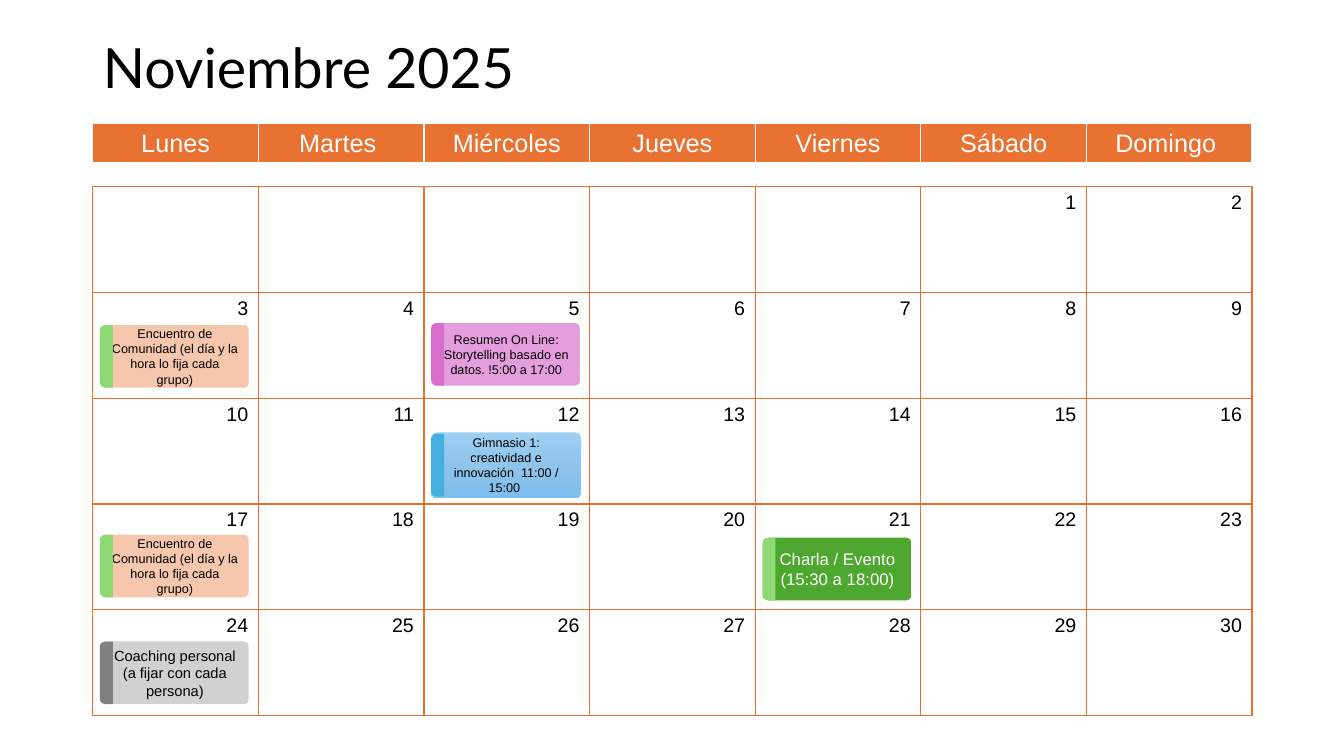
from copy import deepcopy

from lxml import etree
from pptx import Presentation
from pptx.dml.color import RGBColor
from pptx.enum import shapes, text
from pptx.oxml import ns
from pptx.util import Inches, Pt

COLORS = {
    "orange": "E97132", "white": "FFFFFF", "black": "000000",
    "peach": "F6C6AD", "light_green": "8ED973", "green": "4EA72E",
    "pink": "E59EDD", "magenta": "D86ECC", "blue": "46B1E1",
    "sky_top": "9ECFF5", "sky_middle": "90C4EB", "sky_bottom": "7CBEED",
    "light_gray": "D1D1D1", "gray": "808080",
}
TITLE = "Noviembre 2025"
WEEKDAYS = ["Lunes", "Martes ", "Miércoles", "Jueves", "Viernes", "Sábado", "Domingo "]
FIRST_COLUMN, DAYS, WEEKS = 5, 30, 5
SKY = ("sky_top", "sky_middle", "sky_bottom")
COMMUNITY = "Encuentro de Comunidad (el día y la hora lo fija cada grupo)"
# day, distance below the top of the day cell, text, size, card fill, tab fill, text color
EVENTS = [
    (12, 0.34, "Gimnasio 1: creatividad e innovación  11:00 / 15:00 ", 9, SKY, "blue", "black"),
    (21, 0.32, "Charla / Evento (15:30 a 18:00)", 12, "green", "light_green", "white"),
    (3, 0.31, COMMUNITY, 9, "peach", "light_green", "black"),
    (17, 0.29, COMMUNITY, 9, "peach", "light_green", "black"),
    (24, 0.3, "Coaching personal (a fijar con cada persona)", 10.5, "light_gray", "gray", "black"),
    (5, 0.29, "Resumen On Line: Storytelling basado en datos. !5:00 a 17:00", 9,
     "pink", "magenta", "black"),
]

LEFT, WIDTH = 0.92, 11.5
HEADER_TOP, HEADER_HEIGHT = 1.22, 0.41
GRID_TOP, ROW_HEIGHT = 1.85, 1.05
COLUMN_WIDTH = WIDTH / len(WEEKDAYS)
CARD_WIDTH, CARD_HEIGHT, CARD_INDENT = 1.49, 0.65, 0.07
TAB_LENGTH, TAB_THICKNESS = 0.62, 0.13


def rgb(name):
    return RGBColor.from_string(COLORS[name])


def write(frame, words, size, color, alignment, font="Arial"):
    paragraph = frame.paragraphs[0]
    paragraph.alignment = alignment
    run = paragraph.add_run()
    run.text = words
    run.font.name = font
    run.font.size = Pt(size)
    run.font.bold = False
    run.font.color.rgb = rgb(color)
    return paragraph


def set_borders(cell, color, widths):
    """Draw the left, right, top and bottom cell borders, with widths in points."""
    properties = cell._tc.get_or_add_tcPr()
    for side, width in zip("LRTB", widths):
        line = etree.SubElement(properties, ns.qn(f"a:ln{side}"), w=str(Pt(width)))
        fill = etree.SubElement(line, ns.qn("a:solidFill"))
        etree.SubElement(fill, ns.qn("a:srgbClr"), val=COLORS[color])


def add_plain_table(slide, rows, top, row_height):
    table = slide.shapes.add_table(
        rows, len(WEEKDAYS), Inches(LEFT), Inches(top),
        Inches(WIDTH), Inches(rows * row_height)).table
    table.first_row = table.horz_banding = False
    for row in table.rows:
        row.height = Inches(row_height)
    for column in table.columns:
        column.width = Inches(COLUMN_WIDTH)
    return table


def add_header(slide):
    table = add_plain_table(slide, 1, HEADER_TOP, HEADER_HEIGHT)
    for cell, weekday in zip(table.iter_cells(), WEEKDAYS):
        set_borders(cell, "white", (1, 1, 1, 3))
        cell.fill.solid()
        cell.fill.fore_color.rgb = rgb("orange")
        cell.vertical_anchor = text.MSO_ANCHOR.MIDDLE
        write(cell.text_frame, weekday, 18, "white", text.PP_ALIGN.CENTER)


def add_month(slide):
    table = add_plain_table(slide, WEEKS, GRID_TOP, ROW_HEIGHT)
    for day, cell in enumerate(table.iter_cells(), 1 - FIRST_COLUMN):
        set_borders(cell, "orange", (1, 1, 1, 1))
        cell.fill.background()
        if 1 <= day <= DAYS:
            write(cell.text_frame, str(day), 14, "black", text.PP_ALIGN.RIGHT)


def fill_vertical_gradient(fill, names):
    fill.gradient()
    fill.gradient_angle = 270
    first = fill.gradient_stops[0]._gs
    first.addnext(deepcopy(first))
    for index, (stop, name) in enumerate(zip(fill.gradient_stops, names)):
        stop.position = index / (len(names) - 1)
        stop.color.rgb = rgb(name)


def add_block(group, kind, left, top, width, height, fill):
    block = group.shapes.add_shape(
        kind, Inches(left), Inches(top), Inches(width), Inches(height))
    block.shadow.inherit = False
    block.line.fill.background()
    if isinstance(fill, tuple):
        fill_vertical_gradient(block.fill, fill)
    else:
        block.fill.solid()
        block.fill.fore_color.rgb = rgb(fill)
    return block


def add_event(slide, day, drop, words, size, card_fill, tab_fill, color):
    week, weekday = divmod(day - 1 + FIRST_COLUMN, len(WEEKDAYS))
    left = LEFT + weekday * COLUMN_WIDTH + CARD_INDENT
    top = GRID_TOP + week * ROW_HEIGHT + drop
    group = slide.shapes.add_group_shape()

    card = add_block(group, shapes.MSO_SHAPE.ROUNDED_RECTANGLE,
                     left, top, CARD_WIDTH, CARD_HEIGHT, card_fill)
    card.adjustments[0] = 0.089
    if card_fill != SKY:
        card.line.color.rgb = rgb("white")
        card.line.width = Pt(2)
    card.text_frame.word_wrap = True
    card.text_frame.vertical_anchor = text.MSO_ANCHOR.MIDDLE
    write(card.text_frame, words, size, color, text.PP_ALIGN.CENTER)

    # The tab is turned on its side, so it is placed by its center.
    tab = add_block(group, shapes.MSO_SHAPE.ROUND_2_SAME_RECTANGLE,
                    left + (TAB_THICKNESS - TAB_LENGTH) / 2,
                    top + (CARD_HEIGHT - TAB_THICKNESS) / 2,
                    TAB_LENGTH, TAB_THICKNESS, tab_fill)
    tab.adjustments[0], tab.adjustments[1] = 0.4, 0
    tab.rotation = 270


def add_title(slide):
    title = slide.shapes.title
    title.left, title.top = Inches(LEFT), Inches(0.4)
    title.width, title.height = Inches(WIDTH), Inches(0.6)
    title.text_frame.auto_size = text.MSO_AUTO_SIZE.NONE
    title.text_frame.vertical_anchor = text.MSO_ANCHOR.MIDDLE
    paragraph = write(title.text_frame, TITLE, 39.6, "black", text.PP_ALIGN.LEFT, "Lato")
    paragraph.line_spacing = 0.9


def main():
    presentation = Presentation()
    presentation.slide_width, presentation.slide_height = Inches(13.33), Inches(7.5)
    slide = presentation.slides.add_slide(presentation.slide_layouts[5])
    add_title(slide)
    add_month(slide)
    add_header(slide)
    for event in EVENTS:
        add_event(slide, *event)
    presentation.save("out.pptx")


if __name__ == "__main__":
    main()
